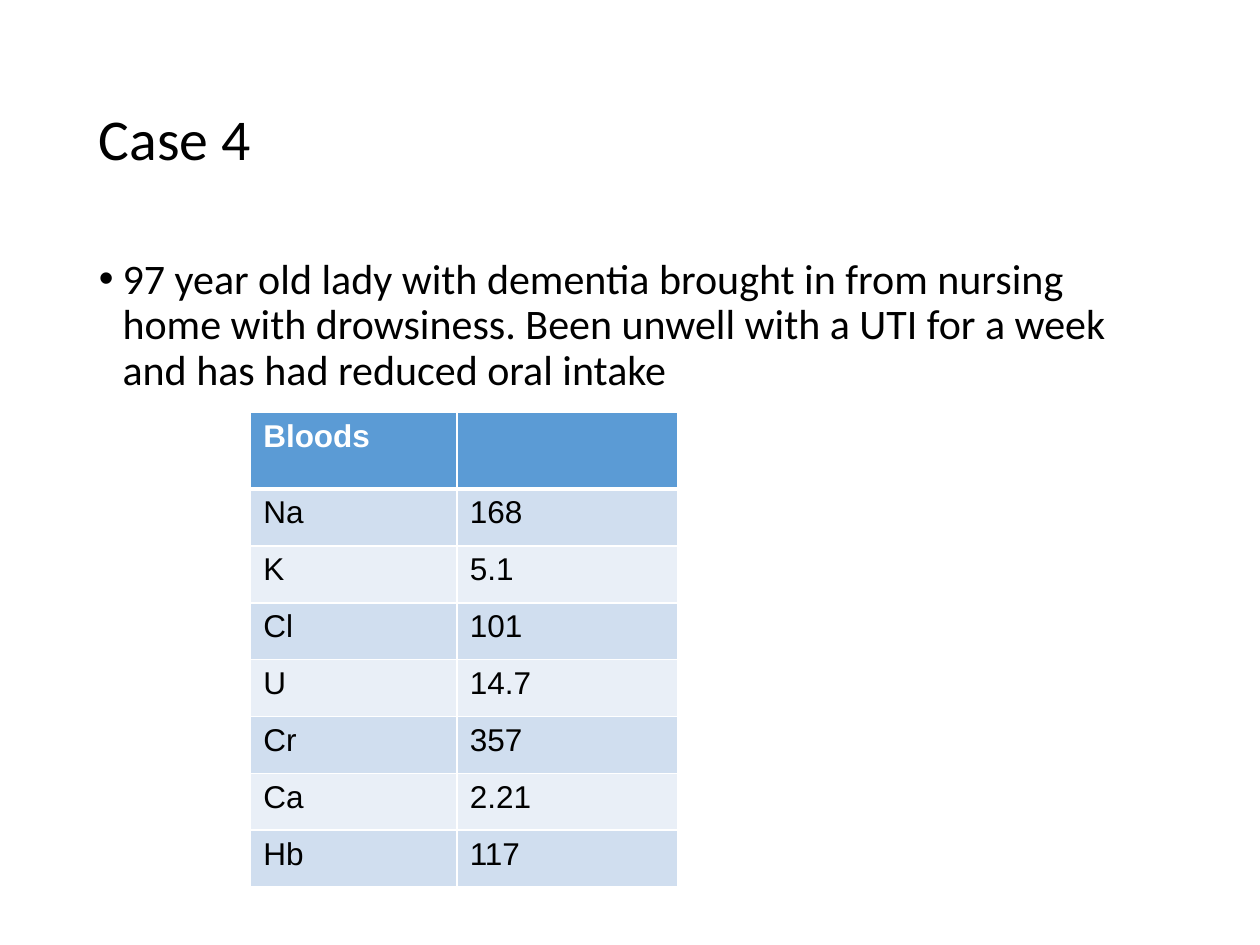
from lxml.etree import SubElement
from pptx import Presentation
from pptx.dml.color import RGBColor
from pptx.enum.text import MSO_ANCHOR
from pptx.oxml.ns import qn
from pptx.util import Pt

TITLE = "Case 4"
HISTORY = ("97 year old lady with dementia brought in from nursing home with "
           "drowsiness. Been unwell with a UTI for a week and has had reduced "
           "oral intake")
BLOODS = [
    ("Bloods", ""),
    ("Na", "168"),
    ("K", "5.1"),
    ("Cl", "101"),
    ("U", "14.7"),
    ("Cr", "357"),
    ("Ca", "2.21"),
    ("Hb", "117"),
]

BLACK = RGBColor(0x00, 0x00, 0x00)
WHITE = RGBColor(0xFF, 0xFF, 0xFF)
HEADER_BLUE = RGBColor(0x5B, 0x9B, 0xD5)
BANDS = [RGBColor(0xE9, 0xEF, 0xF7), RGBColor(0xD0, 0xDE, 0xEF)]

LEFT, WIDTH = 49.5, 621
TABLE_LEFT, TABLE_TOP = 143.25, 235.5
COL_WIDTHS = (118, 126)
HEADER_HEIGHT, ROW_HEIGHT = 44, 32.5
HANGING = 13.5


def style_font(font, name, size, color, bold=False):
    font.name, font.size, font.bold = name, Pt(size), bold
    font.color.rgb = color


def add_text(slide, text, top, height, size, anchor, bullet=False):
    box = slide.shapes.add_textbox(Pt(LEFT), Pt(top), Pt(WIDTH), Pt(height))
    tf = box.text_frame
    tf.word_wrap = True
    tf.vertical_anchor = anchor
    tf.text = text
    p = tf.paragraphs[0]
    p.line_spacing = 0.9
    if bullet:
        pPr = p._p.get_or_add_pPr()
        pPr.set("marL", str(Pt(HANGING)))
        pPr.set("indent", str(-Pt(HANGING)))
        SubElement(pPr, qn("a:buFont"), typeface="Arial")
        SubElement(pPr, qn("a:buChar"), char="•")
    style_font(p.runs[0].font, "Calibri", size, BLACK)


def set_borders(cell, widths):
    tcPr = cell._tc.get_or_add_tcPr()
    for side, width in zip("LRTB", widths):
        ln = SubElement(tcPr, qn(f"a:ln{side}"), w=str(Pt(width)))
        fill = SubElement(ln, qn("a:solidFill"))
        SubElement(fill, qn("a:srgbClr"), val=str(WHITE))


def add_bloods_table(slide):
    heights = [HEADER_HEIGHT] + [ROW_HEIGHT] * (len(BLOODS) - 1)
    table = slide.shapes.add_table(
        len(BLOODS), len(COL_WIDTHS), Pt(TABLE_LEFT), Pt(TABLE_TOP),
        Pt(sum(COL_WIDTHS)), Pt(sum(heights))).table
    for column, width in zip(table.columns, COL_WIDTHS):
        column.width = Pt(width)
    for i, (values, height) in enumerate(zip(BLOODS, heights)):
        table.rows[i].height = Pt(height)
        header = i == 0
        # A thick rule separates the header from the results
        borders = (1, 1, 3 if i == 1 else 1, 3 if header else 1)
        for j, value in enumerate(values):
            cell = table.cell(i, j)
            set_borders(cell, borders)
            cell.fill.solid()
            cell.fill.fore_color.rgb = HEADER_BLUE if header else BANDS[i % 2]
            cell.text = value
            for r in cell.text_frame.paragraphs[0].runs:
                style_font(r.font, "Arial", 18, WHITE if header else BLACK, header)


prs = Presentation()
prs.slide_width, prs.slide_height = Pt(720), Pt(540)
slide = prs.slides.add_slide(prs.slide_layouts[6])

# Title and case history
add_text(slide, TITLE, 28.75, 104.5, 33, MSO_ANCHOR.MIDDLE)
add_text(slide, HISTORY, 144, 342.5, 24, MSO_ANCHOR.TOP, bullet=True)

# Blood results
add_bloods_table(slide)

prs.save("out.pptx")
